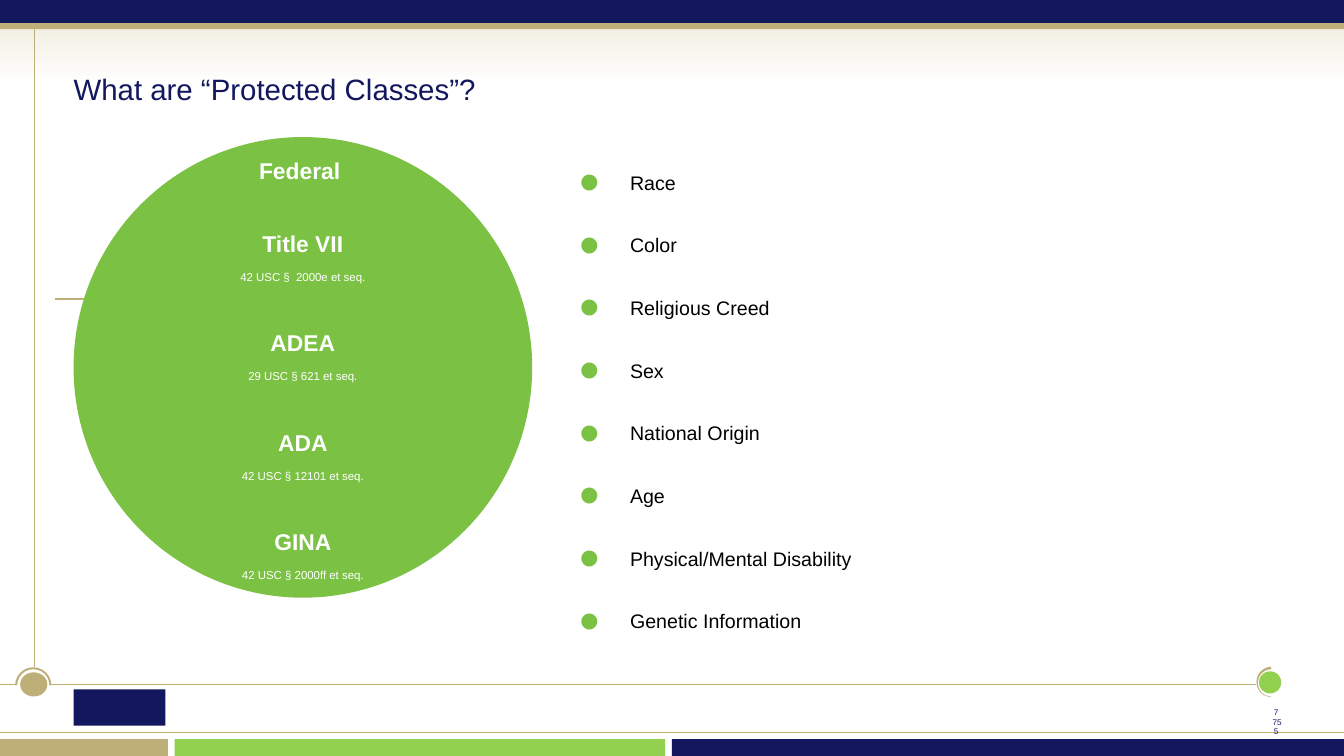
from lxml import etree
from pptx import Presentation
from pptx.dml.color import RGBColor
from pptx.enum.shapes import MSO_CONNECTOR, MSO_SHAPE
from pptx.enum.text import MSO_ANCHOR, MSO_AUTO_SIZE, PP_ALIGN
from pptx.oxml.ns import qn
from pptx.util import Inches, Pt

RECTANGLE, OVAL, ARC = MSO_SHAPE.RECTANGLE, MSO_SHAPE.OVAL, MSO_SHAPE.BLOCK_ARC
STRAIGHT = MSO_CONNECTOR.STRAIGHT
TOP, MIDDLE = MSO_ANCHOR.TOP, MSO_ANCHOR.MIDDLE
LEFT, CENTER = PP_ALIGN.LEFT, PP_ALIGN.CENTER
NO_AUTOFIT = MSO_AUTO_SIZE.NONE

NAVY = RGBColor(0x12, 0x17, 0x5E)
GOLD = RGBColor(0xBD, 0xAF, 0x77)
PALE_GOLD = RGBColor(0xF2, 0xEF, 0xE4)
LIME = RGBColor(0x92, 0xD0, 0x50)
GREEN = RGBColor(0x7B, 0xC1, 0x43)
WHITE = RGBColor(0xFF, 0xFF, 0xFF)
BLACK = RGBColor(0, 0, 0)

# Grid of 160 columns by 90 rows
WIDTH, HEIGHT = Inches(13.33), Inches(7.5)
COLUMNS, ROWS = 160, 90

LAWS = [
    ("Title VII", "42 USC §  2000e et seq."),
    ("ADEA", "29 USC § 621 et seq."),
    ("ADA", "42 USC § 12101 et seq."),
    ("GINA", "42 USC § 2000ff et seq."),
]
CLASSES = ["Race", "Color", "Religious Creed", "Sex", "National Origin",
           "Age", "Physical/Mental Disability", "Genetic Information"]


def across(columns):
    return round(WIDTH * columns / COLUMNS)


def down(rows):
    return round(HEIGHT * rows / ROWS)


def cells(left, top, width, height):
    return across(left), down(top), across(width), down(height)


def add_filled(slide, kind, area, color):
    shape = slide.shapes.add_shape(kind, *cells(*area))
    shape.shadow.inherit = False
    shape.fill.solid()
    shape.fill.fore_color.rgb = color
    shape.line.fill.background()
    return shape


def add_rule(slide, start, end, width=1):
    rule = slide.shapes.add_connector(
        STRAIGHT, across(start[0]), down(start[1]), across(end[0]), down(end[1]))
    rule.line.color.rgb = GOLD
    rule.line.width = Pt(width)
    etree.SubElement(rule._element.spPr, qn("a:effectLst"))


def add_marker(slide, ring, disc, dot, dot_color, rotation=0):
    """Half ring around a white disc with a coloured dot."""
    add_filled(slide, ARC, ring, GOLD).rotation = rotation
    add_filled(slide, OVAL, disc, WHITE)
    add_filled(slide, OVAL, dot, dot_color)


def set_frame(shape, anchor, wrap=True, bottom=0):
    frame = shape.text_frame
    frame.auto_size = NO_AUTOFIT
    frame.word_wrap = wrap
    frame.vertical_anchor = anchor
    frame.margin_left = frame.margin_right = frame.margin_top = 0
    frame.margin_bottom = bottom
    return frame


def place_in_front(shape, area):
    shape.left, shape.top, shape.width, shape.height = cells(*area)
    shape._element.getparent().append(shape._element)


def format_paragraph(paragraph, alignment, before=0):
    paragraph.alignment = alignment
    paragraph.line_spacing = 1.95
    paragraph.space_before = Pt(before)


def format_run(run, size, color, bold=False):
    run.font.name = "Arial"
    run.font.size = Pt(size)
    run.font.bold = bold
    run.font.color.rgb = color


def add_bullet(paragraph):
    properties = paragraph._p.get_or_add_pPr()
    properties.set("marL", str(Inches(0.5)))
    properties.set("indent", str(-Inches(0.5)))
    bullet_color = etree.SubElement(properties, qn("a:buClr"))
    etree.SubElement(bullet_color, qn("a:srgbClr"), val=str(GREEN))
    etree.SubElement(properties, qn("a:buSzPct"), val="300000")
    etree.SubElement(properties, qn("a:buFont"), typeface="Arial")
    etree.SubElement(properties, qn("a:buChar"), char="•")


def add_background(slide):
    # Header
    glow = add_filled(slide, RECTANGLE, (0, 3.36, 160, 6.72), WHITE)
    glow.fill.gradient()
    glow.fill.gradient_angle = 270
    for stop, color in zip(glow.fill.gradient_stops, (PALE_GOLD, WHITE)):
        stop.color.rgb = color
    add_rule(slide, (4.08, 0), (4.08, 79.44))
    add_filled(slide, RECTANGLE, (0, 0, 160, 2.88), NAVY)
    add_filled(slide, RECTANGLE, (0, 2.76, 160, 0.72), GOLD)

    # Footer
    for left, width, color in ((0, 20, GOLD), (20.8, 58.4, LIME), (80, 80, NAVY)):
        add_filled(slide, RECTANGLE, (left, 88, width, 2), color)
    for left, right, row in ((0, 4.44, 81.48), (6.12, 149.52, 81.48), (0, 160, 87.24)):
        add_rule(slide, (left, row), (right, row))
    add_marker(slide, (1.8, 79.44, 4.32, 4.32), (2.04, 79.68, 3.84, 3.96),
               (2.4, 80.04, 3.24, 2.88), GOLD)
    add_marker(slide, (149.52, 79.44, 3.6, 3.48), (149.76, 79.68, 3.24, 3.24),
               (149.88, 79.92, 2.64, 2.64), LIME, rotation=270)
    add_filled(slide, RECTANGLE, (8.76, 82.08, 10.92, 4.32), NAVY)


def add_page_number(slide, left, wrap):
    box = slide.shapes.add_textbox(*cells(left, 84.36, 0.96, 2.04))
    frame = set_frame(box, MIDDLE, wrap)
    frame.text = "75"
    format_paragraph(frame.paragraphs[0], CENTER)
    format_run(frame.paragraphs[0].runs[0], 5.83, NAVY)


def fill_title(title):
    place_in_front(title, (8.76, 4.5, 145.2, 7.32))
    frame = set_frame(title, TOP)
    frame.text = "What are “Protected Classes”?"
    format_paragraph(frame.paragraphs[0], LEFT)
    format_run(frame.paragraphs[0].runs[0], 21, NAVY)


def fill_classes(body):
    place_in_front(body, (69, 17.64, 89.64, 57.6))
    frame = set_frame(body, TOP)
    frame.text = "\n".join(CLASSES)
    for index, paragraph in enumerate(frame.paragraphs):
        format_paragraph(paragraph, LEFT, before=12 if index else 0)
        add_bullet(paragraph)
        format_run(paragraph.runs[0], 14, BLACK)


def add_law_circle(slide):
    add_rule(slide, (6.6, 35.64), (10.92, 35.64), 1.5)
    circle = add_filled(slide, OVAL, (8.76, 16.32, 54.6, 54.84), GREEN)
    frame = set_frame(circle, MIDDLE, bottom=Inches(0.22))
    frame.text = "Federal "
    format_paragraph(frame.paragraphs[0], CENTER)
    format_run(frame.paragraphs[0].runs[0], 16.33, WHITE, bold=True)
    for name, citation in LAWS:
        paragraph = frame.add_paragraph()
        paragraph.text = f"{name}\v{citation}"
        format_paragraph(paragraph, CENTER, before=13.8)
        name_run, citation_run = paragraph.runs
        format_run(name_run, 16.33, WHITE, bold=True)
        format_run(citation_run, 8.17, WHITE)


def main():
    presentation = Presentation()
    presentation.slide_width, presentation.slide_height = WIDTH, HEIGHT
    slide = presentation.slides.add_slide(presentation.slide_layouts[1])
    title, body = slide.shapes.title, slide.placeholders[1]
    add_background(slide)
    fill_title(title)
    fill_classes(body)
    add_law_circle(slide)
    add_page_number(slide, 151.44, wrap=True)
    add_page_number(slide, 151.56, wrap=False)
    presentation.save("out.pptx")


if __name__ == "__main__":
    main()
